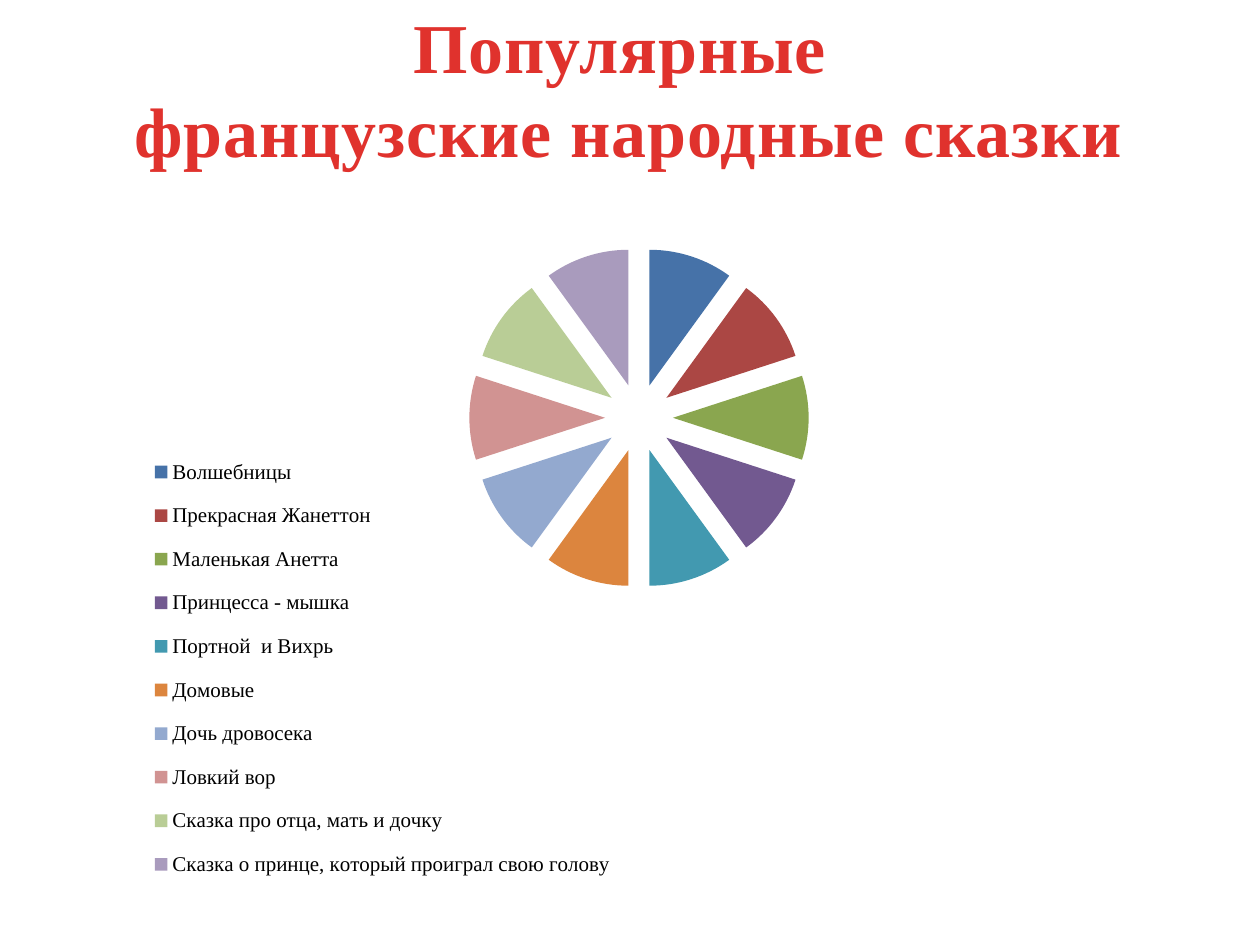
from dataclasses import dataclass

from lxml import etree
from pptx import Presentation
from pptx import util as u
from pptx.chart.data import CategoryChartData
from pptx.dml.color import RGBColor
from pptx.enum import chart as ch, text
from pptx.oxml.ns import qn


@dataclass(frozen=True)
class Theme:
    title_color: str = "E0322D"
    text_color: str = "000000"
    font: str = "Times New Roman"
    base_font: str = "Calibri"
    title_size: int = 40
    legend_size: int = 12
    base_size: int = 10


@dataclass(frozen=True)
class Box:
    """Left, top, width and height as shares of the enclosing area."""
    x: float
    y: float
    w: float
    h: float


@dataclass(frozen=True)
class Tale:
    name: str
    color: str
    share: int = 10


THEME = Theme()
WIDTH, HEIGHT = u.Inches(10), u.Inches(7.5)
TITLE_BOX = Box(0.093, -0.003, 0.813, 0.193)
CHART_BOX = Box(0.012, 0.206, 0.969, 0.745)
PLOT_BOX = Box(0.024, 0.076, 0.974, 0.482)
LEGEND_BOX = Box(0.091, 0.348, 0.42, 0.65)

TITLE = ["Популярные ", "французские народные сказки"]
TALES = [
    Tale("Волшебницы", "4672A8"),
    Tale("Прекрасная Жанеттон", "AB4744"),
    Tale("Маленькая Анетта", "8AA64F"),
    Tale("Принцесса - мышка ", "725990"),
    Tale("Портной  и Вихрь ", "4299B0"),
    Tale("Домовые", "DC853E"),
    Tale("Дочь дровосека", "93A9CF"),
    Tale("Ловкий вор", "D19392"),
    Tale("Сказка про отца, мать и дочку", "B9CD96"),
    Tale("Сказка о принце, который проиграл свою голову", "A99BBD"),
]


def place(box: Box) -> tuple[int, int, int, int]:
    return (int(box.x * WIDTH), int(box.y * HEIGHT),
            int(box.w * WIDTH), int(box.h * HEIGHT))


def set_font(font, name: str, size: int, color: str, bold: bool = False) -> None:
    font.name, font.size, font.bold = name, u.Pt(size), bold
    font.color.rgb = RGBColor.from_string(color)


def set_layout(parent, box: Box, before: tuple[str, ...], inner: bool = False) -> None:
    """Give a chart part a fixed place, ahead of the child tags in before."""
    for old in parent.findall(qn("c:layout")):
        parent.remove(old)
    layout = etree.Element(qn("c:layout"))
    manual = etree.SubElement(layout, qn("c:manualLayout"))
    values = [("layoutTarget", "inner")] if inner else []
    values += [("xMode", "edge"), ("yMode", "edge")]
    values += [(key, str(getattr(box, key))) for key in "xywh"]
    for tag, value in values:
        etree.SubElement(manual, qn(f"c:{tag}")).set("val", value)
    following = next(el for el in parent if el.tag in [qn(t) for t in before])
    following.addprevious(layout)


def add_title(s) -> None:
    tf = s.shapes.add_textbox(*place(TITLE_BOX)).text_frame
    tf.word_wrap = False
    for i, line in enumerate(TITLE):
        p = tf.paragraphs[0] if i == 0 else tf.add_paragraph()
        p.alignment = text.PP_ALIGN.CENTER
        r = p.add_run()
        r.text = line
        r.font._element.set("spc", "50")
        set_font(p.font, THEME.font, THEME.title_size, THEME.title_color, bold=True)


def add_tales_chart(s) -> None:
    data = CategoryChartData(number_format="General")
    data.categories = [tale.name for tale in TALES]
    data.add_series("Series 1", [tale.share for tale in TALES])
    chart = s.shapes.add_chart(ch.XL_CHART_TYPE.PIE_EXPLODED,
                               *place(CHART_BOX), data).chart
    chart.has_title = False
    set_font(chart.font, THEME.base_font, THEME.base_size, THEME.text_color)

    # Slices
    plot = chart.plots[0]
    plot.vary_by_categories = True
    for i, tale in enumerate(TALES):
        fill = plot.series[0].points[i].format.fill
        fill.solid()
        fill.fore_color.rgb = RGBColor.from_string(tale.color)
    set_layout(plot._element.getparent(), PLOT_BOX, ("c:pieChart",), inner=True)

    # Legend
    chart.has_legend = True
    legend = chart.legend
    legend.position = ch.XL_LEGEND_POSITION.BOTTOM
    legend.include_in_layout = False
    set_font(legend.font, THEME.font, THEME.legend_size, THEME.text_color)
    set_layout(legend._element, LEGEND_BOX, ("c:overlay", "c:txPr"))


def main() -> None:
    prs = Presentation()
    prs.slide_width, prs.slide_height = WIDTH, HEIGHT
    s = prs.slides.add_slide(prs.slide_layouts[6])
    add_title(s)
    add_tales_chart(s)
    prs.save("out.pptx")


if __name__ == "__main__":
    main()
